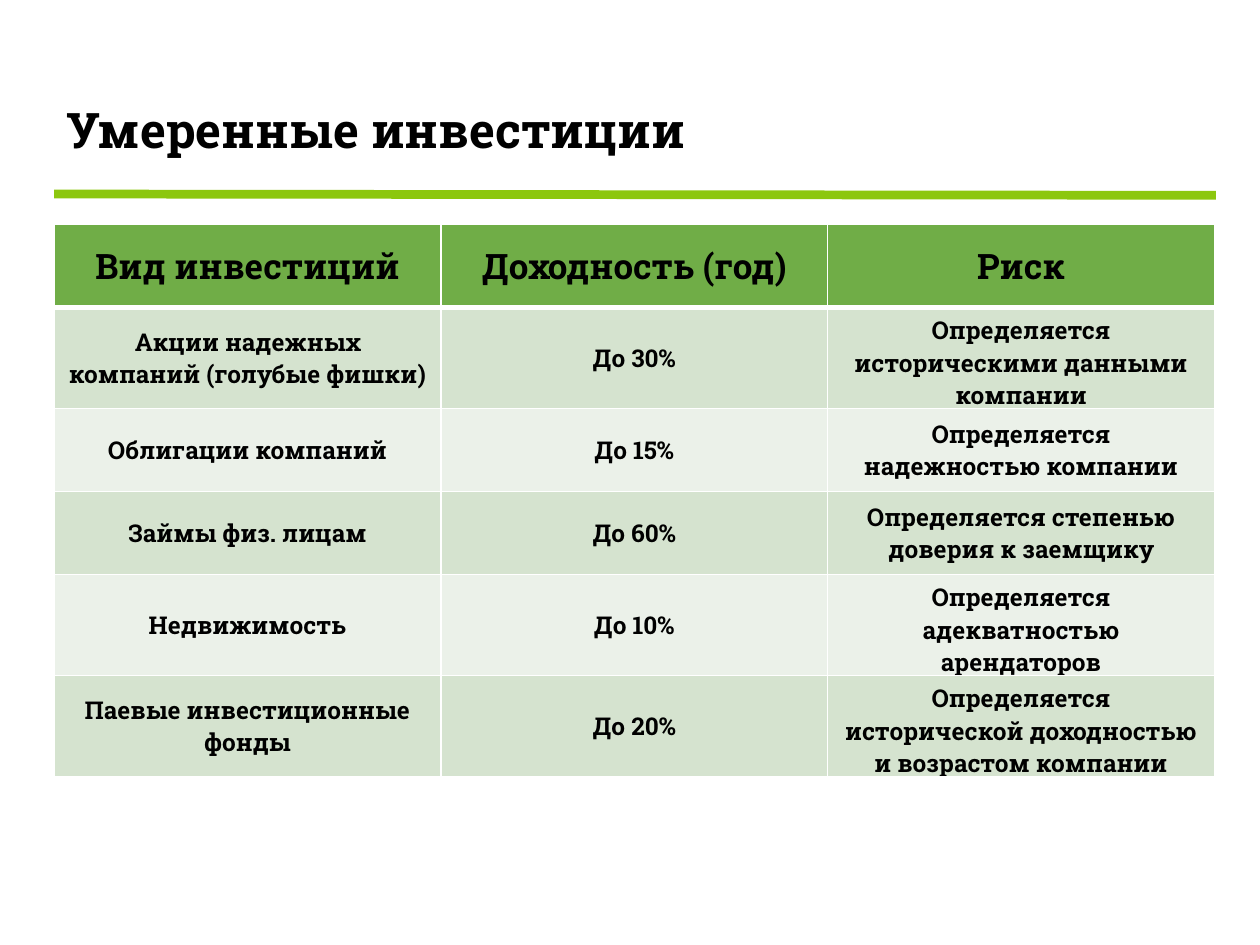
import pptx
import pptx.dml.color
import pptx.enum.shapes
import pptx.enum.text
import pptx.oxml
import pptx.oxml.ns
import pptx.util
from pptx.util import Inches

HEADING = "Умеренные инвестиции"
COLUMNS = ["Вид инвестиций", "Доходность (год)", "Риск"]
INVESTMENTS = [
    ("Акции надежных компаний (голубые фишки)", "До 30%", "Определяется историческими данными компании"),
    ("Облигации компаний", "До 15%", "Определяется надежностью компании"),
    ("Займы физ. лицам", "До 60%", "Определяется степенью доверия к заемщику"),
    ("Недвижимость", "До 10%", "Определяется адекватностью арендаторов"),
    ("Паевые инвестиционные фонды", "До 20%", "Определяется исторической доходностью и возрастом компании"),
]

THEME = {
    "font": "Roboto Slab",
    "text": "000000",
    "rule": "8CC70E",
    "header": "70AD47",
    "bands": ("D5E3CF", "EBF1E9"),
    "border": "FFFFFF",
    "title_size": 28,
    "header_size": 20,
    "body_size": 14,
}
LEFT, TABLE_TOP = 0.43, 1.78
COLUMN_WIDTH, ROW_HEIGHT = 3.07, 0.66
ALIGN = pptx.enum.text.PP_ALIGN
ANCHOR = pptx.enum.text.MSO_ANCHOR


def rgb(value):
    return pptx.dml.color.RGBColor.from_string(value)


def apply(target, values):
    for name, value in values.items():
        setattr(target, name, value)


def write(frame, text, size, align):
    paragraph = frame.paragraphs[0]
    paragraph.alignment = align
    run = paragraph.add_run()
    run.text = text
    apply(run.font, {"name": THEME["font"], "size": pptx.util.Pt(size), "bold": True})
    run.font.color.rgb = rgb(THEME["text"])
    return paragraph


def add_borders(cell, widths):
    properties = cell._tc.get_or_add_tcPr()
    for index, (side, points) in enumerate(widths.items()):
        border = pptx.oxml.parse_xml(
            f'<a:ln{side} {pptx.oxml.ns.nsdecls("a")} w="{pptx.util.Pt(points)}">'
            f'<a:solidFill><a:srgbClr val="{THEME["border"]}"/></a:solidFill></a:ln{side}>'
        )
        properties.insert(index, border)


def add_heading(slide):
    title = slide.shapes.title
    apply(title, {"left": Inches(LEFT), "top": Inches(0.79), "width": Inches(8.27), "height": Inches(0.57)})
    apply(title.text_frame, {
        "word_wrap": True,
        "auto_size": pptx.enum.text.MSO_AUTO_SIZE.SHAPE_TO_FIT_TEXT,
        "vertical_anchor": ANCHOR.TOP,
    })
    write(title.text_frame, HEADING, THEME["title_size"], ALIGN.LEFT).line_spacing = 0.9


def add_rule(slide):
    rule = slide.shapes.add_connector(
        pptx.enum.shapes.MSO_CONNECTOR.STRAIGHT,
        Inches(LEFT), Inches(1.54), Inches(9.65), Inches(1.55),
    )
    rule.line.color.rgb = rgb(THEME["rule"])
    rule.line.width = pptx.util.Pt(5)
    rule._element.spPr.append(pptx.oxml.parse_xml(f'<a:effectLst {pptx.oxml.ns.nsdecls("a")}/>'))


def add_investments(slide):
    rows = [COLUMNS, *INVESTMENTS]
    table = slide.shapes.add_table(
        len(rows), len(COLUMNS), Inches(LEFT), Inches(TABLE_TOP),
        Inches(COLUMN_WIDTH * len(COLUMNS)), Inches(ROW_HEIGHT * len(rows)),
    ).table
    for column in table.columns:
        column.width = Inches(COLUMN_WIDTH)
    for row_index, texts in enumerate(rows):
        table.rows[row_index].height = Inches(ROW_HEIGHT)
        is_header = row_index == 0
        fill = THEME["header"] if is_header else THEME["bands"][(row_index - 1) % 2]
        size = THEME["header_size"] if is_header else THEME["body_size"]
        widths = {"L": 1, "R": 1, "T": 3 if row_index == 1 else 1, "B": 3 if is_header else 1}
        for column_index, text in enumerate(texts):
            cell = table.cell(row_index, column_index)
            cell.vertical_anchor = ANCHOR.MIDDLE
            cell.fill.solid()
            cell.fill.fore_color.rgb = rgb(fill)
            write(cell.text_frame, text, size, ALIGN.CENTER)
            add_borders(cell, widths)


def main():
    deck = pptx.Presentation()
    apply(deck, {"slide_width": Inches(10), "slide_height": Inches(7.5)})
    slide = deck.slides.add_slide(deck.slide_layouts[5])
    add_heading(slide)
    add_rule(slide)
    add_investments(slide)
    deck.save("out.pptx")


if __name__ == "__main__":
    main()
